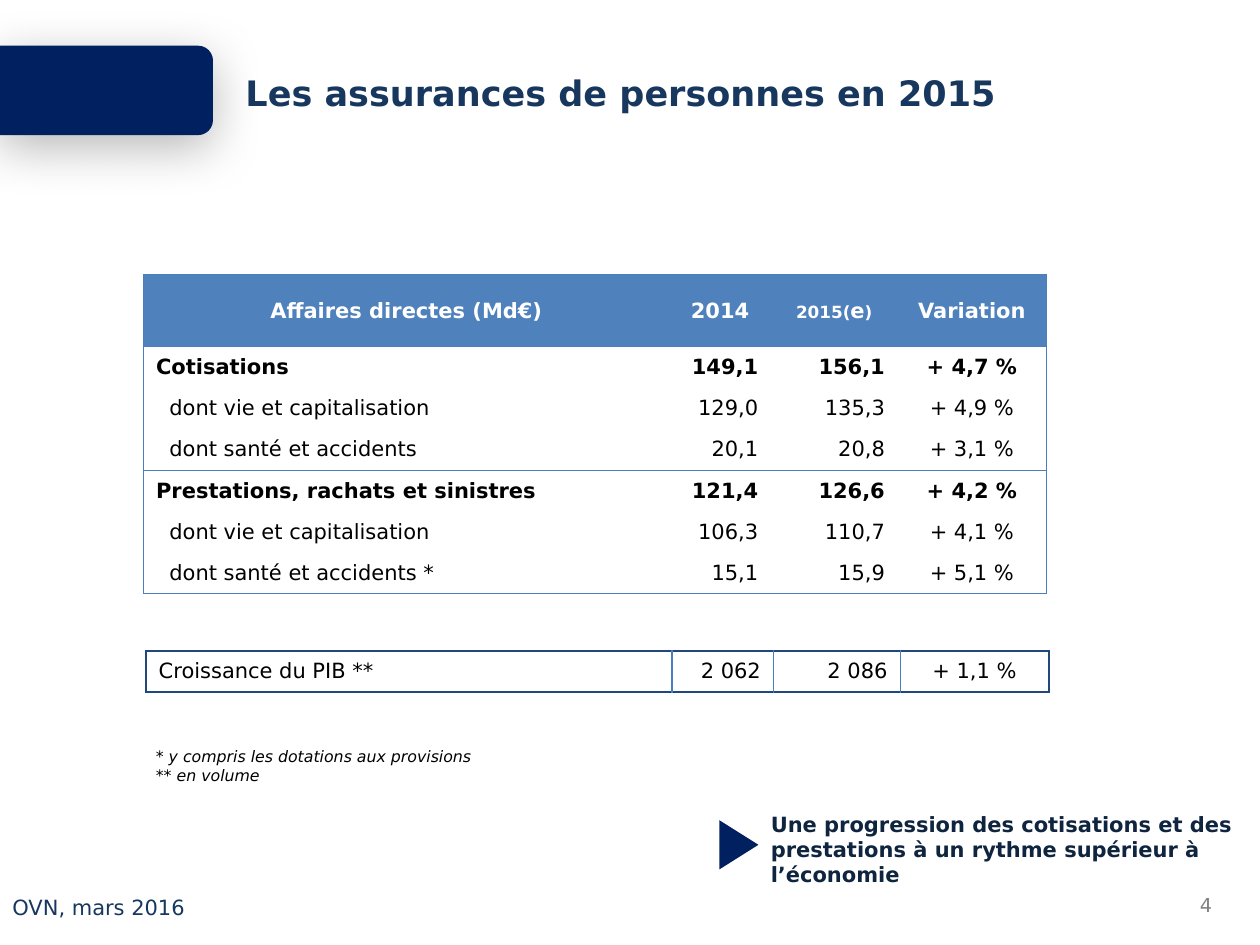
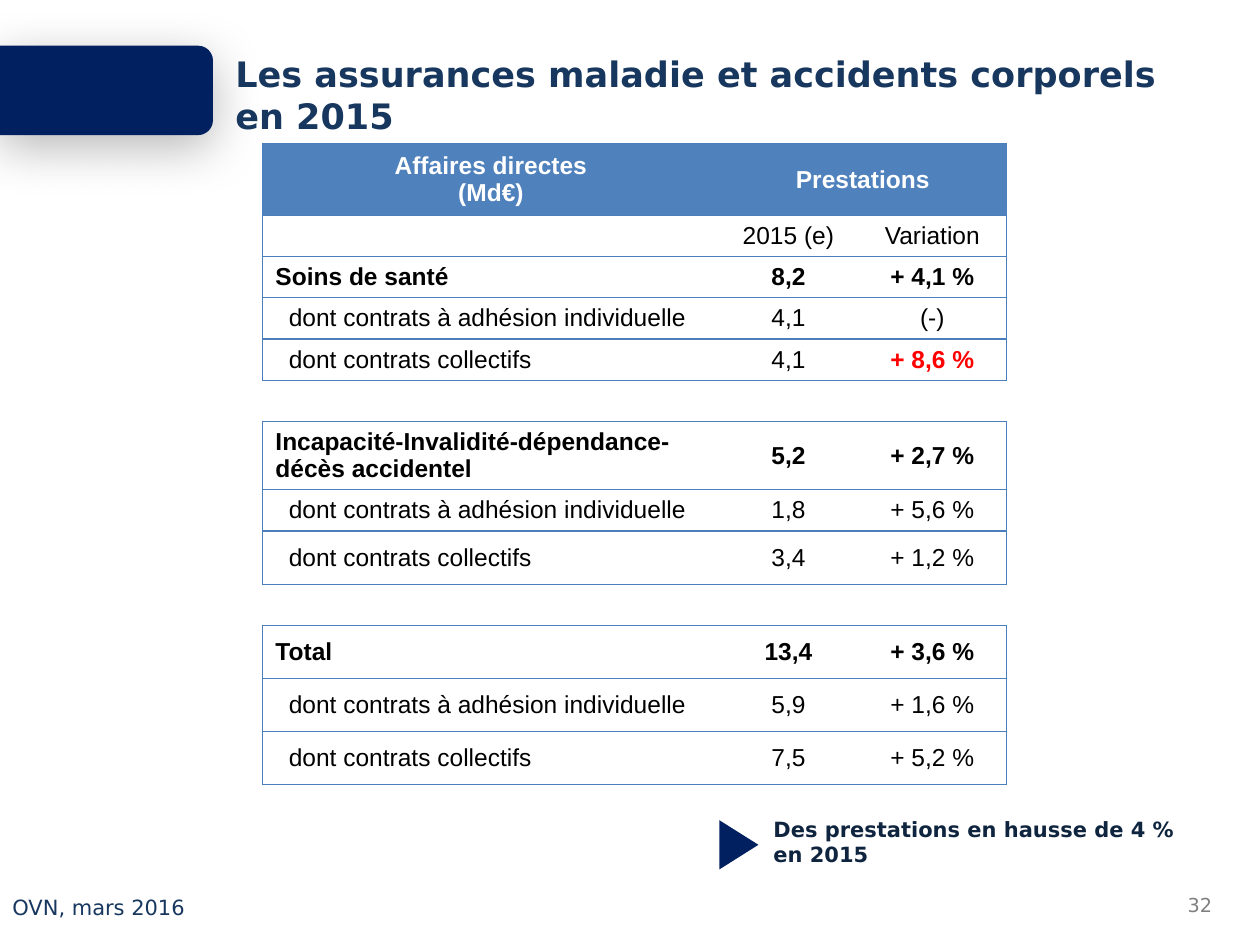
from dataclasses import dataclass, field, replace
from typing import Optional, Union

from lxml import etree
from pptx import Presentation
from pptx.dml.color import RGBColor
from pptx.enum import shapes, text
from pptx.oxml import ns
from pptx.util import Pt

LEFT, MID, RIGHT = text.PP_ALIGN.LEFT, text.PP_ALIGN.CENTER, text.PP_ALIGN.RIGHT


# Theme: colours and text styles
@dataclass(frozen=True)
class Style:
    size: float
    color: str
    bold: bool = False
    ital: bool = False
    font: str = "DejaVu Sans"
    small: bool = False


@dataclass(frozen=True)
class Theme:
    navy: str = "002060"
    head: str = "4F81BD"
    rule: str = "4B7EBC"
    frame: str = "1F497D"
    white: str = "FFFFFF"
    title: Style = Style(20, "17375E", bold=True)
    foot: Style = Style(12, "17375E")
    page: Style = Style(11, "808080")
    key: Style = Style(12, "0F243E", bold=True)
    note: Style = Style(9, "000000", ital=True)
    body: Style = Style(12, "000000")
    wide: Style = Style(14, "000000", font="Arial")


THEME = Theme()


# Building blocks
@dataclass(frozen=True)
class Run:
    text: str
    style: Style


@dataclass(frozen=True)
class Box:
    x: float
    y: float
    w: float
    h: float

    def pts(self) -> tuple:
        return Pt(self.x), Pt(self.y), Pt(self.w), Pt(self.h)


@dataclass(frozen=True)
class Row:
    kind: str  # head, main, sub, plain or gap
    cells: tuple[Union[str, list[Run]], ...]
    high: float = 23.5


@dataclass(frozen=True)
class Grid:
    x: float
    y: float
    cols: tuple[float, ...]
    aligns: tuple
    rows: list[Row]
    style: Style
    rules: set[int]  # row boundaries that carry a line
    walls: set[int] = field(default_factory=set)  # inner column boundaries
    edge: str = THEME.rule
    thick: float = 0.75
    fill: Optional[str] = None


def rgb(code: str) -> RGBColor:
    return RGBColor.from_string(code)


def write(frame, paras: list[list[Run]], align=LEFT, after: float = 0) -> None:
    """Fill a text frame, one list of runs per paragraph."""
    for i, runs in enumerate(paras):
        para = frame.paragraphs[0] if i == 0 else frame.add_paragraph()
        para.alignment = align
        if after:
            para.space_after = Pt(after)
        for item in runs:
            run = para.add_run()
            run.text = item.text
            font, style = run.font, item.style
            font.name, font.size = style.font, Pt(style.size)
            font.bold, font.italic = style.bold, style.ital
            font.color.rgb = rgb(style.color)
            if style.small:
                run._r.get_or_add_rPr().set("cap", "small")


def label(slide, box: Box, lines: list[str], style: Style, align=LEFT,
          middle: bool = False, after: float = 0) -> None:
    frame = slide.shapes.add_textbox(*box.pts()).text_frame
    frame.word_wrap = True
    if middle:
        frame.vertical_anchor = text.MSO_ANCHOR.MIDDLE
    else:
        frame.auto_size = text.MSO_AUTO_SIZE.SHAPE_TO_FIT_TEXT
    write(frame, [[Run(line, style)] for line in lines], align, after)


def solid(slide, kind, box: Box):
    """Add a navy shape turned a quarter to the right."""
    shape = slide.shapes.add_shape(kind, *box.pts())
    shape.rotation = 90
    shape.shadow.inherit = False
    shape.fill.solid()
    shape.fill.fore_color.rgb = rgb(THEME.navy)
    shape.line.fill.background()
    return shape


def shade(shape) -> None:
    """Give a shape a soft shadow below it."""
    effects = shape._element.spPr.find(ns.qn("a:effectLst"))
    shadow = etree.SubElement(
        effects, ns.qn("a:outerShdw"), blurRad=str(Pt(29)), dist=str(Pt(7)),
        dir="5400000", algn="t", rotWithShape="0")
    color = etree.SubElement(shadow, ns.qn("a:srgbClr"), val="000000")
    etree.SubElement(color, ns.qn("a:alpha"), val="28000")


# Tables
def border(cell, side: str, color: Optional[str], thick: float) -> None:
    line = etree.SubElement(cell._tc.get_or_add_tcPr(), ns.qn(f"a:ln{side}"),
                            w=str(Pt(thick)))
    if color:
        fill = etree.SubElement(line, ns.qn("a:solidFill"))
        etree.SubElement(fill, ns.qn("a:srgbClr"), val=color)
    else:
        etree.SubElement(line, ns.qn("a:noFill"))


def outline(cell, grid: Grid, r: int, c: int) -> None:
    def wall(at: int) -> tuple[Optional[str], float]:
        if grid.rows[r].kind != "gap" and at in (0, len(grid.cols)):
            return grid.edge, grid.thick
        return (THEME.rule if at in grid.walls else None), 0.75

    def level(at: int) -> tuple[Optional[str], float]:
        return (grid.edge if at in grid.rules else None), grid.thick

    for side, look in (("L", wall(c)), ("R", wall(c + 1)),
                       ("T", level(r)), ("B", level(r + 1))):
        border(cell, side, *look)


def paint(cell, color: Optional[str]) -> None:
    if color:
        cell.fill.solid()
        cell.fill.fore_color.rgb = rgb(color)
    else:
        cell.fill.background()


def table(slide, grid: Grid):
    box = Box(grid.x, grid.y, sum(grid.cols), sum(r.high for r in grid.rows))
    made = slide.shapes.add_table(len(grid.rows), len(grid.cols), *box.pts()).table
    made.first_row = made.horz_banding = False
    for c, wide in enumerate(grid.cols):
        made.columns[c].width = Pt(wide)
    for r, row in enumerate(grid.rows):
        made.rows[r].height = Pt(row.high)
        head = row.kind == "head"
        style = replace(grid.style, bold=row.kind in ("head", "main"),
                        color=THEME.white if head else grid.style.color)
        for c, value in enumerate(row.cells):
            cell = made.cell(r, c)
            cell.vertical_anchor = text.MSO_ANCHOR.MIDDLE
            cell.margin_top = cell.margin_bottom = Pt(2.8 if value else 0)
            outline(cell, grid, r, c)
            paint(cell, THEME.head if head else grid.fill)
            if not value:
                continue
            if row.kind == "sub" and c == 0:
                cell.margin_left = Pt(14.8)
            paras = ([[Run(part, style)] for part in value.split("\n")]
                     if isinstance(value, str) else [value])
            write(cell.text_frame, paras, MID if head else grid.aligns[c])
    return made


# Parts that every slide shares
def start(deck, title: str, spot: Box, page: str, key: str, tip: Box):
    slide = deck.slides.add_slide(deck.slide_layouts[6])
    label(slide, Box(0, 496.8, 496, 43.2), ["OVN, mars 2016"], THEME.foot, middle=True)
    label(slide, Box(659.8, 508, 40, 18), [page], THEME.page, RIGHT, middle=True)
    solid(slide, shapes.MSO_SHAPE.ISOSCELES_TRIANGLE, Box(408.2, 471.6, 28.1, 22.3))
    shade(solid(slide, shapes.MSO_SHAPE.ROUND_2_SAME_RECTANGLE,
                Box(35.3, -9.2, 51.1, 121.7)))
    label(slide, spot, [title], THEME.title, after=10)
    label(slide, tip, [key], THEME.key)
    return slide


def people(deck) -> None:
    slide = start(deck, "Les assurances de personnes en 2015",
                  Box(133.2, 37.4, 521.3, 31.7), "4",
                  "Une progression des cotisations et des prestations "
                  "à un rythme supérieur à l’économie",
                  Box(433.4, 460, 300.2, 51.1))
    big = replace(THEME.body, color=THEME.white, bold=True)
    caps = replace(big, small=True)
    year = [Run("2015(", caps), Run("e", big), Run(")", caps)]
    rows = [
        Row("head", ("Affaires directes (Md€)", "2014", year, "Variation"), 41.2),
        Row("main", ("Cotisations", "149,1", "156,1", "+ 4,7 %")),
        Row("sub", ("dont vie et capitalisation", "129,0", "135,3", "+ 4,9 %")),
        Row("sub", ("dont santé et accidents", "20,1", "20,8", "+ 3,1 %")),
        Row("main", ("Prestations, rachats et sinistres", "121,4", "126,6", "+ 4,2 %")),
        Row("sub", ("dont vie et capitalisation", "106,3", "110,7", "+ 4,1 %")),
        Row("sub", ("dont santé et accidents *", "15,1", "15,9", "+ 5,1 %")),
    ]
    main = Grid(82, 157, (300.5, 58, 72.4, 85), (LEFT, RIGHT, RIGHT, MID),
                rows, THEME.body, rules={0, 1, 4, 7})
    table(slide, main)
    growth = Row("plain", ("Croissance du PIB **", "2 062", "2 086", "+ 1,1 %"))
    table(slide, replace(main, x=83.5, y=372, rows=[growth], rules={0, 1},
                         walls={1, 2, 3}, edge=THEME.frame, thick=1,
                         fill=THEME.white))
    label(slide, Box(82, 423.4, 300.2, 28.8),
          ["* y compris les dotations aux provisions", "** en volume"], THEME.note)


def health(deck) -> None:
    slide = start(deck, "Les assurances maladie et accidents corporels en 2015",
                  Box(127.4, 26.2, 561.6, 55.4), "32",
                  "Des prestations en hausse de 4 % en 2015",
                  Box(434.9, 463, 260, 36))
    solo, group = "dont contrats à adhésion individuelle", "dont contrats collectifs"
    hot = [Run("+ 8,6 %", replace(THEME.wide, color="FF0000", bold=True))]
    gap = Row("gap", ("", "", ""))
    rows = [
        Row("head", ("Affaires directes\n(Md€)", "Prestations", ""), 41.2),
        Row("plain", ("", "2015 (e)", "Variation")),
        Row("main", ("Soins de santé", "8,2", "+ 4,1 %")),
        Row("sub", (solo, "4,1", "(-)")),
        Row("sub", (group, "4,1", hot)),
        gap,
        Row("main", ("Incapacité-Invalidité-dépendance-décès accidentel",
                     "5,2", "+ 2,7 %"), 39),
        Row("sub", (solo, "1,8", "+ 5,6 %")),
        Row("sub", (group, "3,4", "+ 1,2 %"), 30.4),
        gap,
        Row("main", ("Total", "13,4", "+ 3,6 %"), 30.4),
        Row("sub", (solo, "5,9", "+ 1,6 %"), 30.4),
        Row("sub", (group, "7,5", "+ 5,2 %"), 30.4),
    ]
    made = table(slide, Grid(150.2, 82, (260.6, 79.5, 85), (LEFT, MID, MID), rows,
                             THEME.wide, rules=set(range(len(rows) + 1))))
    made.cell(0, 1).merge(made.cell(0, 2))


def main() -> None:
    deck = Presentation()
    deck.slide_width, deck.slide_height = Pt(720), Pt(540)
    people(deck)
    health(deck)
    deck.save("out.pptx")


if __name__ == "__main__":
    main()
